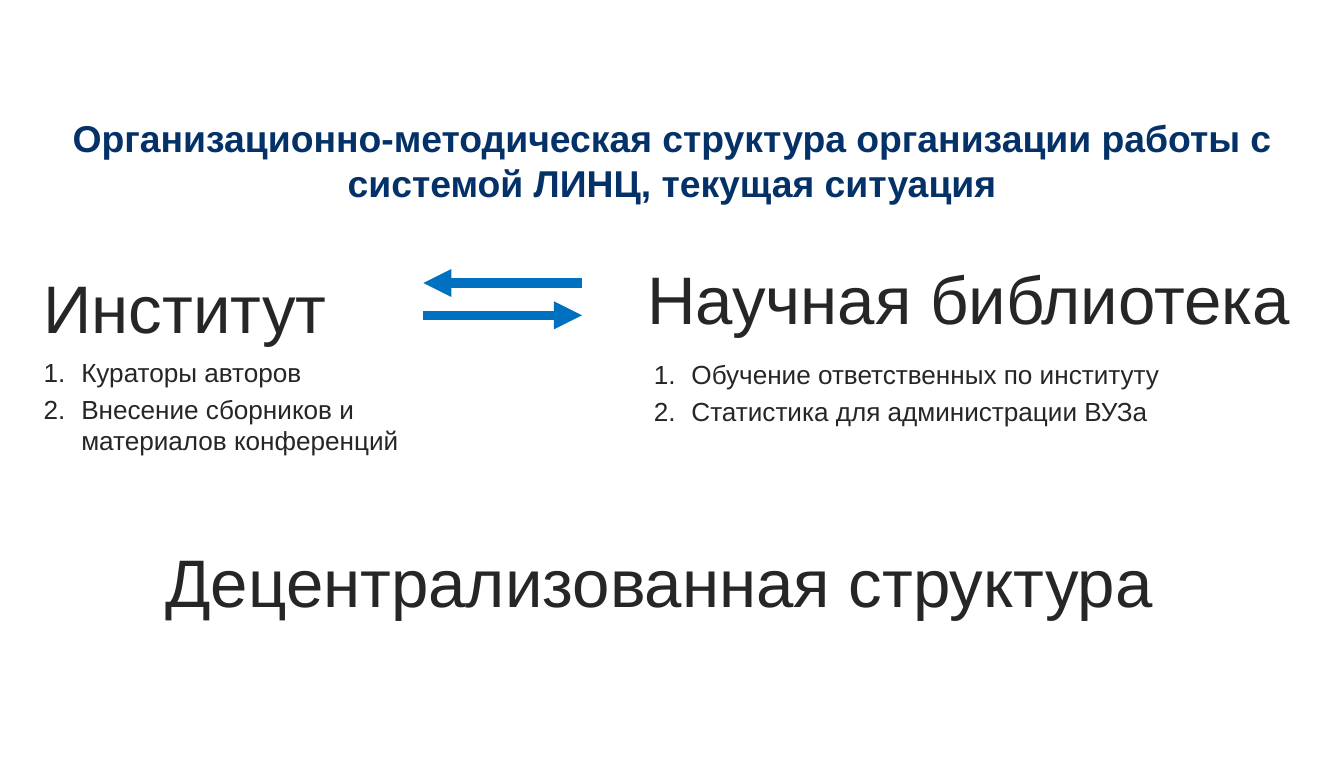
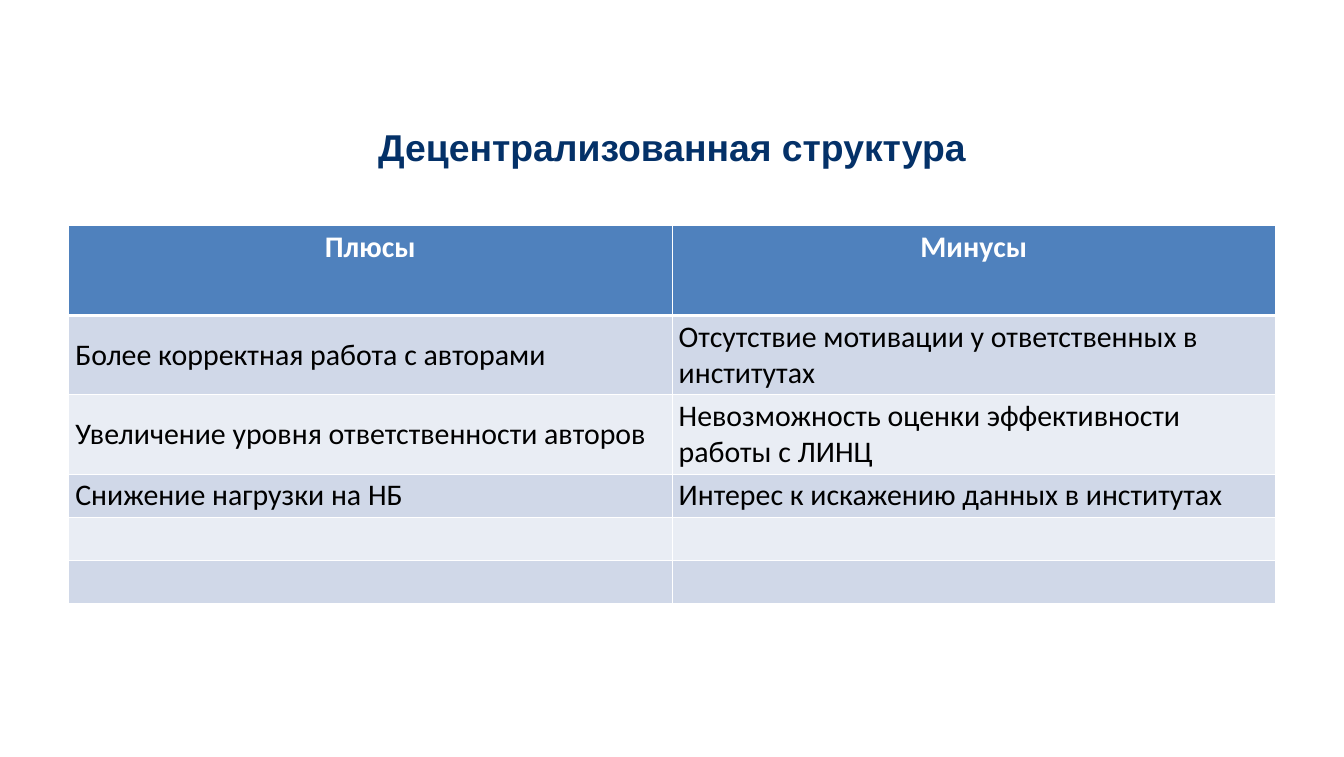
from dataclasses import dataclass
from lxml.etree import SubElement
from pptx import Presentation
from pptx.dml.color import RGBColor
from pptx.enum.shapes import MSO_CONNECTOR
from pptx.enum.text import MSO_ANCHOR, PP_ALIGN
from pptx.oxml.ns import qn
from pptx.util import Pt

PX = 9144  # 100 px to the inch


@dataclass(frozen=True)
class Theme:
    font: str = "Arial"
    grid_font: str = "Calibri"
    navy: RGBColor = RGBColor(0x04, 0x31, 0x68)
    ink: RGBColor = RGBColor(0x26, 0x26, 0x26)
    arrow: RGBColor = RGBColor(0x00, 0x70, 0xC0)
    head: RGBColor = RGBColor(0x4F, 0x81, 0xBD)
    dark: RGBColor = RGBColor(0xD0, 0xD8, 0xE8)
    light: RGBColor = RGBColor(0xE9, 0xED, 0xF4)
    white: RGBColor = RGBColor(0xFF, 0xFF, 0xFF)
    black: RGBColor = RGBColor(0x00, 0x00, 0x00)
    title: int = 40
    big: int = 72
    item: int = 28
    cell: int = 32


T = Theme()


def style(para, size, color, bold=False, name=T.font):
    font = para.font
    font.name, font.size, font.bold = name, Pt(size), bold
    font.color.rgb = color


def add_text(slide, area, lines, size, align=PP_ALIGN.LEFT, title=False, numbered=False):
    """Add a text box with one paragraph per line."""
    frame = slide.shapes.add_textbox(*[n * PX for n in area]).text_frame
    frame.word_wrap = True
    frame.margin_left = frame.margin_right = 18 * PX
    frame.margin_top = frame.margin_bottom = 9 * PX
    if title:
        frame.vertical_anchor = MSO_ANCHOR.MIDDLE
    frame.text = "\n".join(lines)
    for i, para in enumerate(frame.paragraphs):
        para.alignment = align
        if i:
            para.space_before = Pt(size / 5)
        if numbered:
            props = para._p.get_or_add_pPr()
            props.set("marL", str(56 * PX))
            props.set("indent", str(-56 * PX))
            SubElement(props, qn("a:buFont"), typeface="+mj-lt")
            SubElement(props, qn("a:buAutoNum"), type="arabicPeriod")
        style(para, size, T.navy if title else T.ink, title)


deck = Presentation()
deck.slide_width, deck.slide_height = 2000 * PX, 1126 * PX
blank = deck.slide_layouts[6]

# Slide 1: who does what
slide = deck.slides.add_slide(blank)
add_text(slide, (0, 133, 2000, 209),
         ["Организационно-методическая структура организации работы с системой ЛИНЦ, текущая ситуация"],
         T.title, PP_ALIGN.CENTER, title=True)
for area, text, align in [
    ((47, 387, 536, 134), "Институт", PP_ALIGN.LEFT),
    ((906, 374, 1032, 150), "Научная библиотека", PP_ALIGN.RIGHT),
    ((36, 795, 1890, 134), "Децентрализованная структура", PP_ALIGN.CENTER),
]:
    add_text(slide, area, [text], T.big, align)

for start, end, y in [(866, 630, 421), (630, 866, 469)]:
    arrow = slide.shapes.add_connector(MSO_CONNECTOR.STRAIGHT, start * PX, y * PX, end * PX, y * PX)
    arrow.line.color.rgb = T.arrow
    arrow.line.width = Pt(10)
    SubElement(arrow.line._get_or_add_ln(), qn("a:tailEnd"), type="triangle")
    SubElement(arrow._element.spPr, qn("a:effectLst"))

for area, tasks in [
    ((47, 521, 583, 192), ["Кураторы авторов", "Внесение сборников и материалов конференций"]),
    ((955, 524, 982, 192), ["Обучение ответственных по институту", "Статистика для администрации ВУЗа"]),
]:
    add_text(slide, area, tasks, T.item, numbered=True)

# Slide 2: pros and cons
slide = deck.slides.add_slide(blank)
add_text(slide, (0, 133, 2000, 170), ["Децентрализованная структура"],
         T.title, PP_ALIGN.CENTER, title=True)
rows = [
    (134, "Плюсы", "Минусы"),
    (118, "Более корректная работа с авторами", "Отсутствие мотивации у ответственных в институтах"),
    (118, "Увеличение уровня ответственности авторов", "Невозможность оценки эффективности работы с ЛИНЦ"),
    (64, "Снижение нагрузки на НБ", "Интерес к искажению данных в институтах"),
    (64, "", ""),
    (64, "", ""),
]
high = sum(row[0] for row in rows)
table = slide.shapes.add_table(len(rows), 2, 102 * PX, 335 * PX, 1796 * PX, high * PX).table
table.horz_banding = False
for r, (tall, *texts) in enumerate(rows):
    table.rows[r].height = tall * PX
    for c, text in enumerate(texts):
        cell = table.cell(r, c)
        props = cell._tc.get_or_add_tcPr()
        for side in "LRTB":
            thick = r == 0 and side == "B"
            edge = SubElement(props, qn(f"a:ln{side}"), w=str(Pt(3 if thick else 1)))
            SubElement(SubElement(edge, qn("a:solidFill")), qn("a:srgbClr"), val=str(T.white))
        cell.fill.solid()
        cell.fill.fore_color.rgb = T.head if r == 0 else T.dark if r % 2 else T.light
        cell.text = text
        para = cell.text_frame.paragraphs[0]
        if r == 0:
            para.alignment = PP_ALIGN.CENTER
            style(para, T.cell, T.white, True, T.grid_font)
        else:
            cell.vertical_anchor = MSO_ANCHOR.MIDDLE
            style(para, T.cell, T.black, name=T.grid_font)

deck.save("out.pptx")
